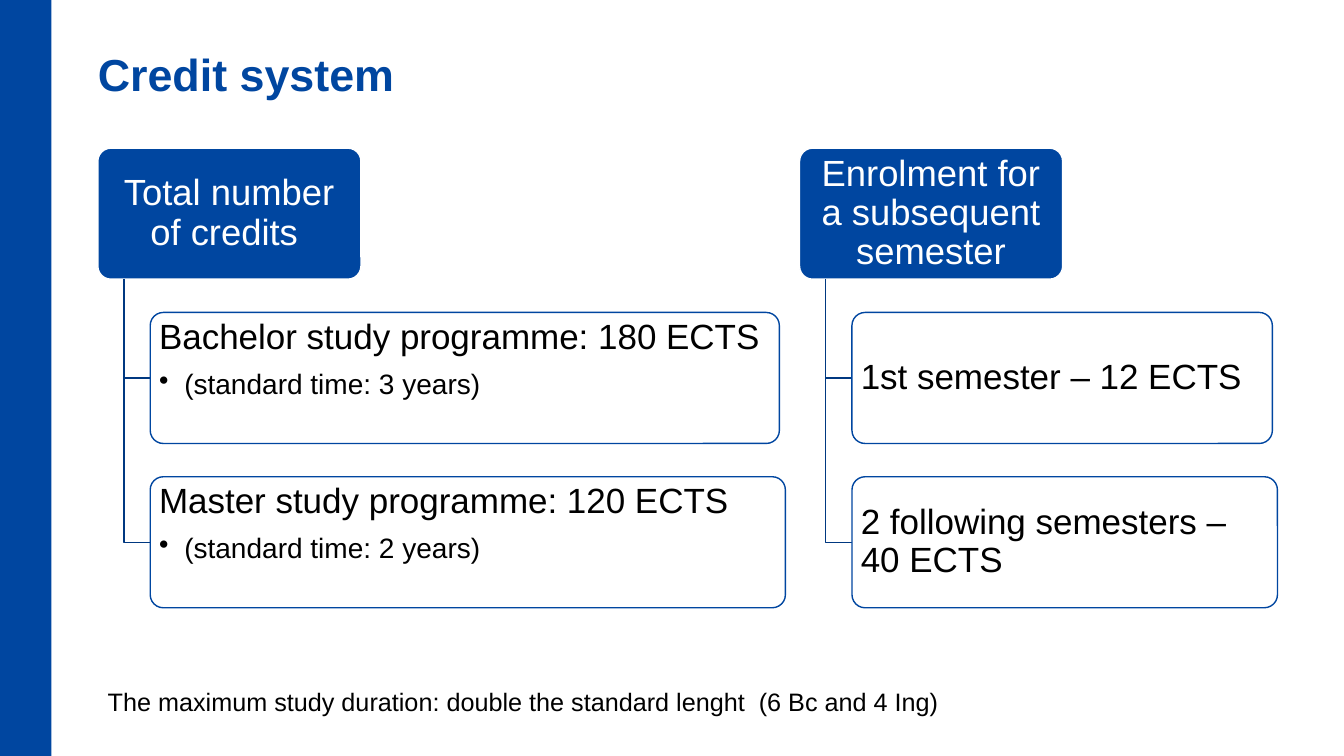
from lxml import etree
from pptx import Presentation
from pptx import util as u
from pptx.dml.color import RGBColor
from pptx.enum import shapes, text
from pptx.oxml.ns import qn

BLUE = RGBColor(0x00, 0x46, 0xA0)
DARK_BLUE = RGBColor(0x00, 0x38, 0x80)
WHITE = RGBColor(0xFF, 0xFF, 0xFF)
BLACK = RGBColor(0, 0, 0)

BOX_H, STEP, INDENT = 1.3, 1.63, 0.26
BRANCHES = [
    (0.97, "Total number of credits ", [
        (6.24, "Bachelor study programme: 180 ECTS", "(standard time: 3 years)"),
        (6.3, "Master study programme: 120 ECTS", "(standard time: 2 years)"),
    ]),
    (7.93, "Enrolment for a subsequent semester", [
        (4.17, "1st semester – 12 ECTS", None),
        (4.22, "2 following semesters – 40 ECTS", None),
    ]),
]


def apply(obj, formats):
    """Set every attribute listed in a dict of format values."""
    for name, value in formats.items():
        setattr(obj, name, value)


def write(p, words, size, color, bold=False, **formats):
    """Put one formatted run into a paragraph."""
    apply(p, formats)
    r = p.add_run()
    r.text = words
    apply(r.font, {"name": "Arial", "size": u.Pt(size), "bold": bold})
    r.font.color.rgb = color


def add_bar(s, x, y, w, h):
    """Draw the plain coloured bar at the slide's edge."""
    sp = s.shapes.add_shape(shapes.MSO_SHAPE.RECTANGLE, *map(u.Inches, (x, y, w, h)))
    sp.shadow.inherit = False
    sp.fill.solid()
    sp.fill.fore_color.rgb = BLUE
    sp.line.fill.background()


def add_text(s, x, y, w, h, words, size, color, bold=False, inset=0.0):
    """Add a one-paragraph text box."""
    tf = s.shapes.add_textbox(*map(u.Inches, (x, y, w, h))).text_frame
    apply(tf, {"word_wrap": True, "margin_left": u.Inches(inset),
               "margin_right": u.Inches(inset), "margin_top": u.Inches(inset / 2),
               "margin_bottom": u.Inches(inset / 2)})
    write(tf.paragraphs[0], words, size, color, bold)


def add_box(s, x, y, w, h, fill, line, anchor):
    """Draw a rounded box and return it ready for text."""
    sp = s.shapes.add_shape(shapes.MSO_SHAPE.ROUNDED_RECTANGLE,
                            *map(u.Inches, (x, y, w, h)))
    sp.adjustments[0] = 0.1
    sp.shadow.inherit = False
    sp.fill.solid()
    sp.fill.fore_color.rgb = fill
    sp.line.color.rgb = line
    sp.line.width = u.Pt(1)
    apply(sp.text_frame, {
        "word_wrap": True, "vertical_anchor": anchor,
        "margin_left": u.Inches(0.05), "margin_right": u.Inches(0.05),
        "margin_top": u.Inches(0.03), "margin_bottom": u.Inches(0.03)})
    return sp


def add_elbow(s, x, y, w, h):
    """Draw a line down and then right across the given box."""
    left, top, right, bottom = map(u.Inches, (x, y, x + w, y + h))
    fb = s.shapes.build_freeform(left, top)
    fb.add_line_segments([(left, bottom), (right, bottom)], close=False)
    sp = fb.convert_to_shape()
    sp.shadow.inherit = False
    sp.fill.background()
    sp.line.color.rgb = DARK_BLUE
    sp.line.width = u.Pt(1)


def add_item(s, x, y, w, h, words, detail):
    """Draw an outlined item box with an optional bulleted detail."""
    anchor = text.MSO_ANCHOR.TOP if detail else text.MSO_ANCHOR.MIDDLE
    sp = add_box(s, x, y, w, h, WHITE, BLUE, anchor)
    color = sp.fill._xPr.find(qn("a:solidFill"))[0]
    etree.SubElement(color, qn("a:alpha"), val="90000")
    tf = sp.text_frame
    p = tf.paragraphs[0]
    write(p, words, 25, BLACK, alignment=text.PP_ALIGN.LEFT, line_spacing=0.9)
    if detail:
        p.space_after = u.Pt(9.5)
        p = tf.add_paragraph()
        pPr = p._p.get_or_add_pPr()
        pPr.set("marL", str(u.Inches(0.25)))
        pPr.set("indent", str(u.Inches(-0.25)))
        etree.SubElement(pPr, qn("a:buChar"), char="•")
        write(p, detail, 20, BLACK, level=1, alignment=text.PP_ALIGN.LEFT,
              line_spacing=0.9)


def add_branch(s, x, y, heading, items):
    """Draw a heading box with its items hanging below it."""
    sp = add_box(s, x, y, 2.61, BOX_H, BLUE, WHITE, text.MSO_ANCHOR.MIDDLE)
    write(sp.text_frame.paragraphs[0], heading, 26, WHITE,
          alignment=text.PP_ALIGN.CENTER, line_spacing=0.9)
    for i, (w, words, detail) in enumerate(items, 1):
        add_elbow(s, x + INDENT, y + BOX_H, INDENT, i * STEP - BOX_H / 2)
        add_item(s, x + 2 * INDENT, y + i * STEP, w, BOX_H, words, detail)


def main():
    """Build and save the credit system slide."""
    prs = Presentation()
    prs.slide_width, prs.slide_height = u.Inches(13.33), u.Inches(7.5)
    s = prs.slides.add_slide(prs.slide_layouts[6])
    add_bar(s, 0, 0, 0.51, 7.5)
    for x, heading, items in BRANCHES:
        add_branch(s, x, 1.47, heading, items)
    add_text(s, 0.97, 0.46, 11.84, 0.68, "Credit system", 32, BLUE, bold=True)
    add_text(s, 0.97, 6.76, 8.52, 0.4,
             "The maximum study duration: double the standard lenght  (6 Bc and 4 Ing)",
             18, BLACK, inset=0.1)
    prs.save("out.pptx")


if __name__ == "__main__":
    main()
